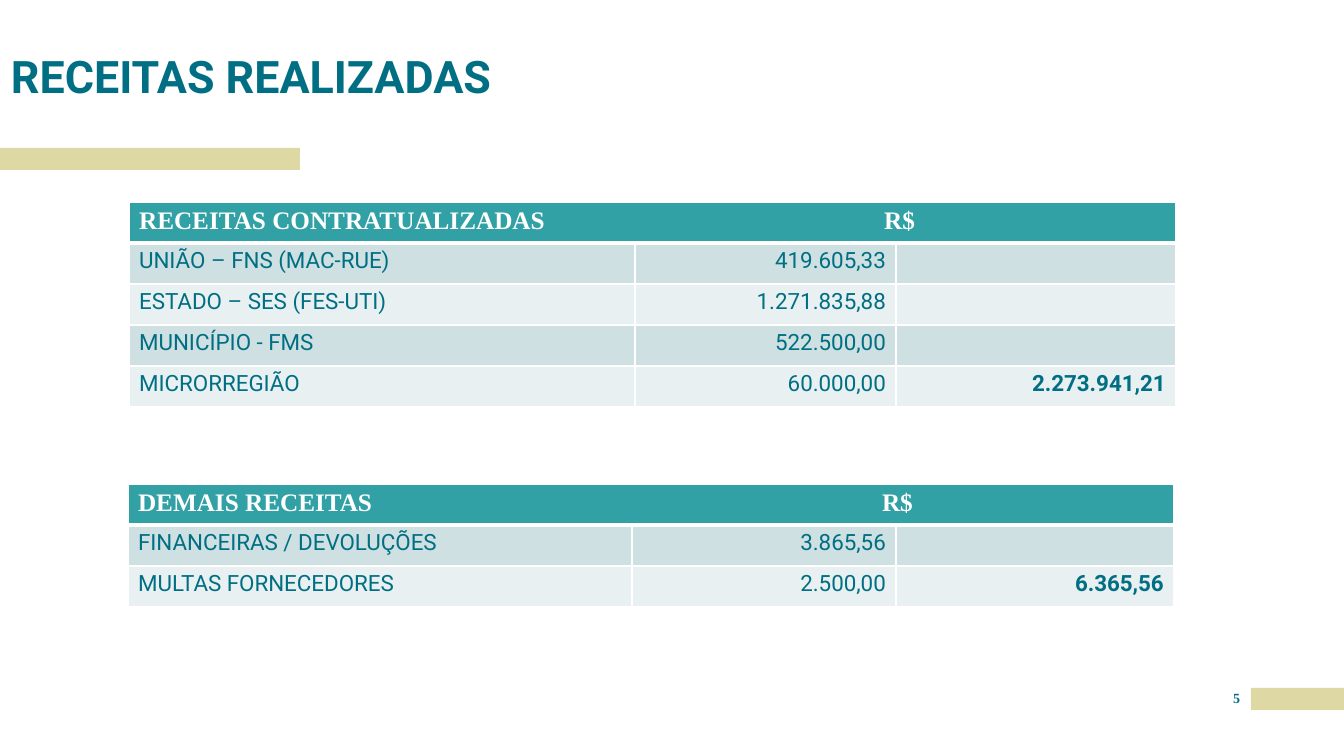
from lxml.etree import SubElement
from pptx import Presentation
from pptx.dml.color import RGBColor
from pptx.enum.shapes import MSO_SHAPE
from pptx.enum.text import MSO_ANCHOR, MSO_AUTO_SIZE, PP_ALIGN
from pptx.oxml import parse_xml
from pptx.oxml.ns import nsdecls, qn
from pptx.util import Pt

SCALE = 914400 / 100.8
ROW_H = 41
TEAL, SAND, HEAD, WHITE = "006F83", "DED8A4", "32A1A6", "FFFFFF"
BANDS = ("CEE0E1", "E8F0F1")
SANS, SERIF = "Roboto", "Times New Roman"

CONTRACTED = [
    ("UNIÃO – FNS (MAC-RUE)", "419.605,33", ""),
    ("ESTADO – SES (FES-UTI)", "1.271.835,88", ""),
    ("MUNICÍPIO - FMS", "522.500,00", ""),
    ("MICRORREGIÃO", "60.000,00", "2.273.941,21"),
]
OTHER = [
    ("FINANCEIRAS / DEVOLUÇÕES", "3.865,56", ""),
    ("MULTAS FORNECEDORES", "2.500,00", "6.365,56"),
]


def px(n):
    return round(n * SCALE)


def rgb(color):
    return RGBColor.from_string(color)


def add_run(p, text, size, font, color, bold=False):
    r = p.add_run()
    r.text = text
    r.font.size = Pt(size)
    r.font.name = font
    r.font.bold = bold
    r.font.color.rgb = rgb(color)


def set_frame(tf, anchor):
    tf.margin_left = tf.margin_top = tf.margin_right = tf.margin_bottom = 0
    tf.word_wrap = True
    tf.auto_size = MSO_AUTO_SIZE.NONE
    tf.vertical_anchor = anchor


def add_bar(s, x, y, w, h):
    sp = s.shapes.add_shape(MSO_SHAPE.RECTANGLE, px(x), px(y), px(w), px(h))
    sp.shadow.inherit = False
    sp.fill.solid()
    sp.fill.fore_color.rgb = rgb(SAND)
    sp.line.fill.background()


def add_heading(s, x, y, w, h, text):
    sp = s.shapes.title
    sp.left, sp.top, sp.width, sp.height = px(x), px(y), px(w), px(h)
    set_frame(sp.text_frame, MSO_ANCHOR.BOTTOM)
    p = sp.text_frame.paragraphs[0]
    p.alignment = PP_ALIGN.LEFT
    p.line_spacing = 0.9
    add_run(p, text, 32, SANS, TEAL, True)
    add_bar(s, 0, y + 148, 300, 22)


def add_footer(s, x, y, w, h, number):
    add_bar(s, x + 29, y, w - 29, h)
    sp = s.shapes.add_textbox(px(x), px(y + 2), px(29), px(25))
    set_frame(sp.text_frame, MSO_ANCHOR.TOP)
    p = sp.text_frame.paragraphs[0]
    p.alignment = PP_ALIGN.CENTER
    add_run(p, number, 10, SERIF, TEAL, True)


def style_cell(cell, color, top, bottom):
    cell.fill.solid()
    cell.fill.fore_color.rgb = rgb(color)
    tcPr = cell._tc.get_or_add_tcPr()
    for i, (side, width) in enumerate(zip("LRTB", (1, 1, top, bottom))):
        tcPr.insert(i, parse_xml(
            f'<a:ln{side} {nsdecls("a")} w="{Pt(width)}"><a:solidFill>'
            f'<a:srgbClr val="{WHITE}"/></a:solidFill></a:ln{side}>'))


def add_revenue_table(s, x, y, widths, heading, tab, rows):
    n = len(rows) + 1
    table = s.shapes.add_table(n, len(widths), px(x), px(y),
                               px(sum(widths)), px(n * ROW_H)).table
    table.first_row = table.horz_banding = False
    for col, width in zip(table.columns, widths):
        col.width = px(width)
    for row in table.rows:
        row.height = px(ROW_H)

    for cell in table.rows[0].cells:
        style_cell(cell, HEAD, 1, 3)
    table.cell(0, 0).merge(table.cell(0, len(widths) - 1))
    p = table.cell(0, 0).text_frame.paragraphs[0]
    tabs = SubElement(p._p.get_or_add_pPr(), qn("a:tabLst"))
    SubElement(tabs, qn("a:tab"), pos=str(px(tab)), algn="l")
    add_run(p, f"{heading}\tR$", 18, SERIF, WHITE, True)

    for i, values in enumerate(rows):
        for j, value in enumerate(values):
            cell = table.cell(i + 1, j)
            style_cell(cell, BANDS[i % 2], 1 if i else 3, 1)
            p = cell.text_frame.paragraphs[0]
            if j:
                p.alignment = PP_ALIGN.RIGHT
            if value:
                add_run(p, value, 16, SANS, TEAL, j == 2)


def main():
    prs = Presentation()
    prs.slide_width, prs.slide_height = px(1344), px(756)
    s = prs.slides.add_slide(prs.slide_layouts[5])
    add_heading(s, 11, 0, 942, 103, "RECEITAS REALIZADAS")
    add_footer(s, 1222, 688, 122, 22, "5")
    add_revenue_table(s, 129, 202, (506, 261, 280),
                      "RECEITAS CONTRATUALIZADAS", 745, CONTRACTED)
    add_revenue_table(s, 128, 484, (504, 264, 278),
                      "DEMAIS RECEITAS", 744, OTHER)
    prs.save("out.pptx")


if __name__ == "__main__":
    main()
